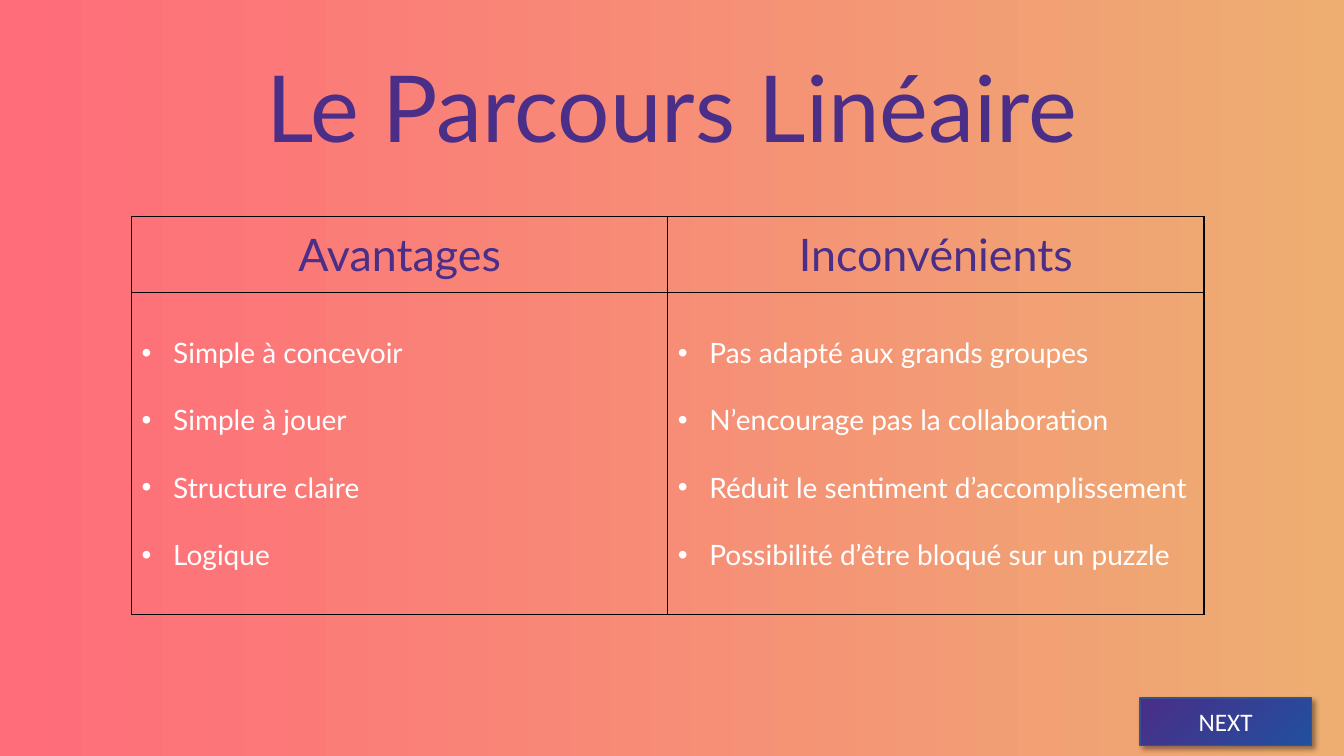
from lxml import etree
from pptx import Presentation
from pptx.dml.color import RGBColor
from pptx.enum.shapes import MSO_SHAPE
from pptx.enum.text import MSO_ANCHOR, PP_ALIGN
from pptx.oxml import parse_xml
from pptx.oxml.ns import nsdecls, qn
from pptx.util import Pt

RECT = MSO_SHAPE.RECTANGLE
MIDDLE = MSO_ANCHOR.MIDDLE
LEFT, CENTER = PP_ALIGN.LEFT, PP_ALIGN.CENTER

PURPLE, BLUE, WHITE = "4A2E87", "224F9F", "FFFFFF"
PINK, SAND = "FF6C7A", "EEAE72"
COLUMNS = {
    "Avantages": [
        "Simple à concevoir",
        "Simple à jouer",
        "Structure claire",
        "Logique",
    ],
    "Inconvénients": [
        "Pas adapté aux grands groupes",
        "N’encourage pas la collaboration",
        "Réduit le sentiment d’accomplissement",
        "Possibilité d’être bloqué sur un puzzle",
    ],
}


def color(value):
    return RGBColor.from_string(value)


def set_gradient(fill, start, end, angle=0):
    fill.gradient()
    fill.gradient_angle = angle
    for stop, value in zip(fill.gradient_stops, (start, end)):
        stop.color.rgb = color(value)


def write(p, text, size, font="Lato", fill=PURPLE, align=CENTER):
    p.alignment = align
    r = p.add_run()
    r.text = text
    r.font.name = font
    r.font.size = Pt(size)
    r.font.color.rgb = color(fill)


def add_bullet(p):
    pPr = p._p.get_or_add_pPr()
    pPr.set("marL", str(Pt(22.5)))
    pPr.set("indent", str(Pt(-22.5)))
    etree.SubElement(pPr, qn("a:buFont"), typeface="Arial")
    etree.SubElement(pPr, qn("a:buChar"), char="•")


def add_borders(cell):
    tcPr = cell._tc.get_or_add_tcPr()
    for side in ("lnL", "lnR", "lnT", "lnB"):
        tcPr.append(parse_xml(
            f'<a:{side} {nsdecls("a")} w="{Pt(1)}"><a:solidFill>'
            f'<a:srgbClr val="000000"/></a:solidFill></a:{side}>'))


def add_title(s, x, y, w, h):
    title = s.shapes.title
    title.left, title.top, title.width, title.height = map(Pt, (x, y, w, h))
    tf = title.text_frame
    tf.vertical_anchor = MIDDLE
    tf.word_wrap = True
    p = tf.paragraphs[0]
    p.line_spacing = 0.9
    write(p, "Le Parcours Linéaire", 66)


def add_comparison(s, x, y, w, h, header_h):
    frame = s.shapes.add_table(2, len(COLUMNS), *map(Pt, (x, y, w, h)))
    table = frame.table
    table.first_row = table.horz_banding = False
    table.rows[0].height = Pt(header_h)
    table.rows[1].height = Pt(h - header_h)
    for cell in table.iter_cells():
        add_borders(cell)
        cell.fill.background()
        cell.vertical_anchor = MIDDLE
    for col, (heading, items) in enumerate(COLUMNS.items()):
        write(table.cell(0, col).text_frame.paragraphs[0], heading, 32)
        tf = table.cell(1, col).text_frame
        for i, item in enumerate(items):
            p = tf.add_paragraph() if i else tf.paragraphs[0]
            if i:
                p.space_before = Pt(24)
            add_bullet(p)
            write(p, item, 20, fill=WHITE, align=LEFT)


def add_next_button(s, x, y, w, h):
    button = s.shapes.add_shape(RECT, *map(Pt, (x, y, w, h)))
    set_gradient(button.fill, PURPLE, BLUE, angle=315)
    button.line.color.rgb = color("325491")
    button.line.width = Pt(1)
    button.shadow.inherit = False
    effects = button._element.spPr.find(qn("a:effectLst"))
    effects.append(parse_xml(
        f'<a:outerShdw {nsdecls("a")} blurRad="{Pt(4)}" dist="{Pt(3)}" '
        'dir="2700000" algn="tl" rotWithShape="0"><a:srgbClr val="000000">'
        '<a:alpha val="40000"/></a:srgbClr></a:outerShdw>'))
    tf = button.text_frame
    tf.vertical_anchor = MIDDLE
    write(tf.paragraphs[0], "NEXT", 18, font="Calibri", fill=WHITE)


def main():
    prs = Presentation()
    prs.slide_width, prs.slide_height = Pt(960), Pt(540)
    s = prs.slides.add_slide(prs.slide_layouts[5])
    set_gradient(s.background.fill, PINK, SAND)
    add_title(s, 66, 41, 828, 79)
    add_next_button(s, 814.3, 498.6, 122.4, 33.8)
    add_comparison(s, 94, 154.8, 766, 284.4, header_h=54)
    prs.save("out.pptx")


if __name__ == "__main__":
    main()
